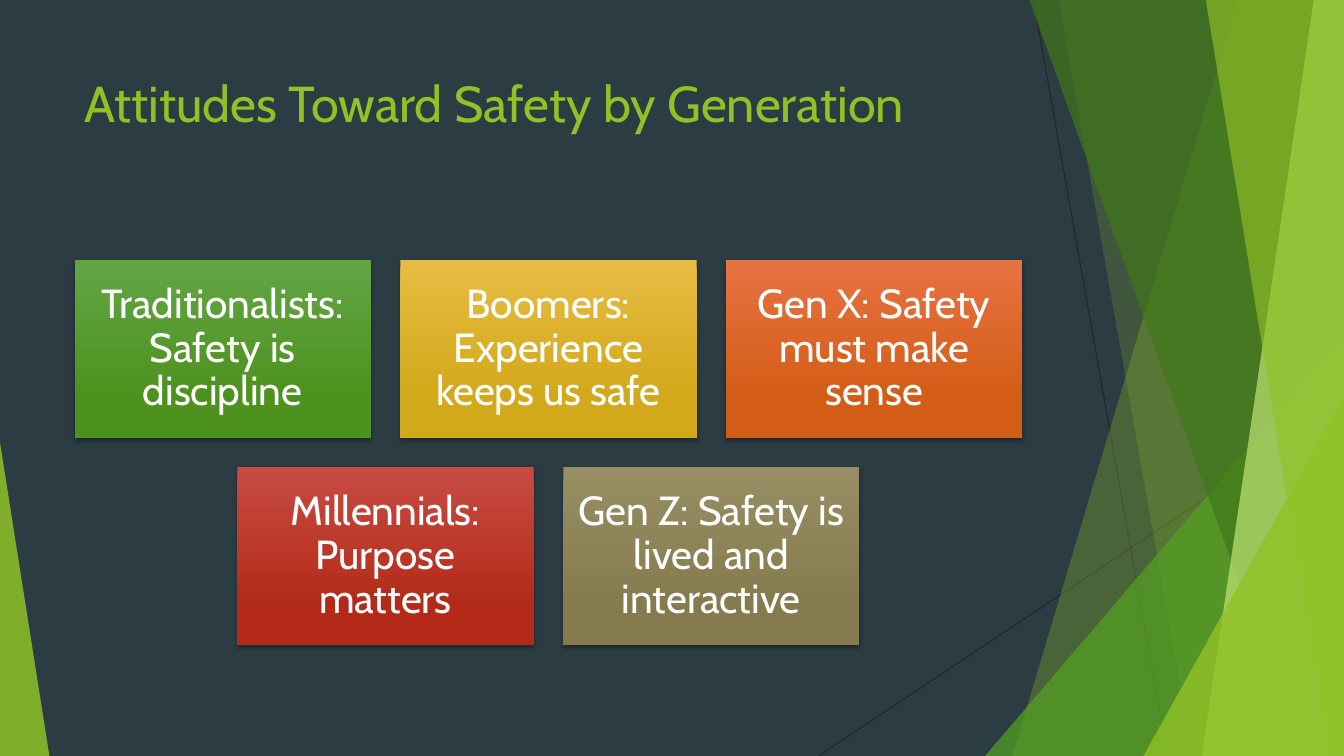
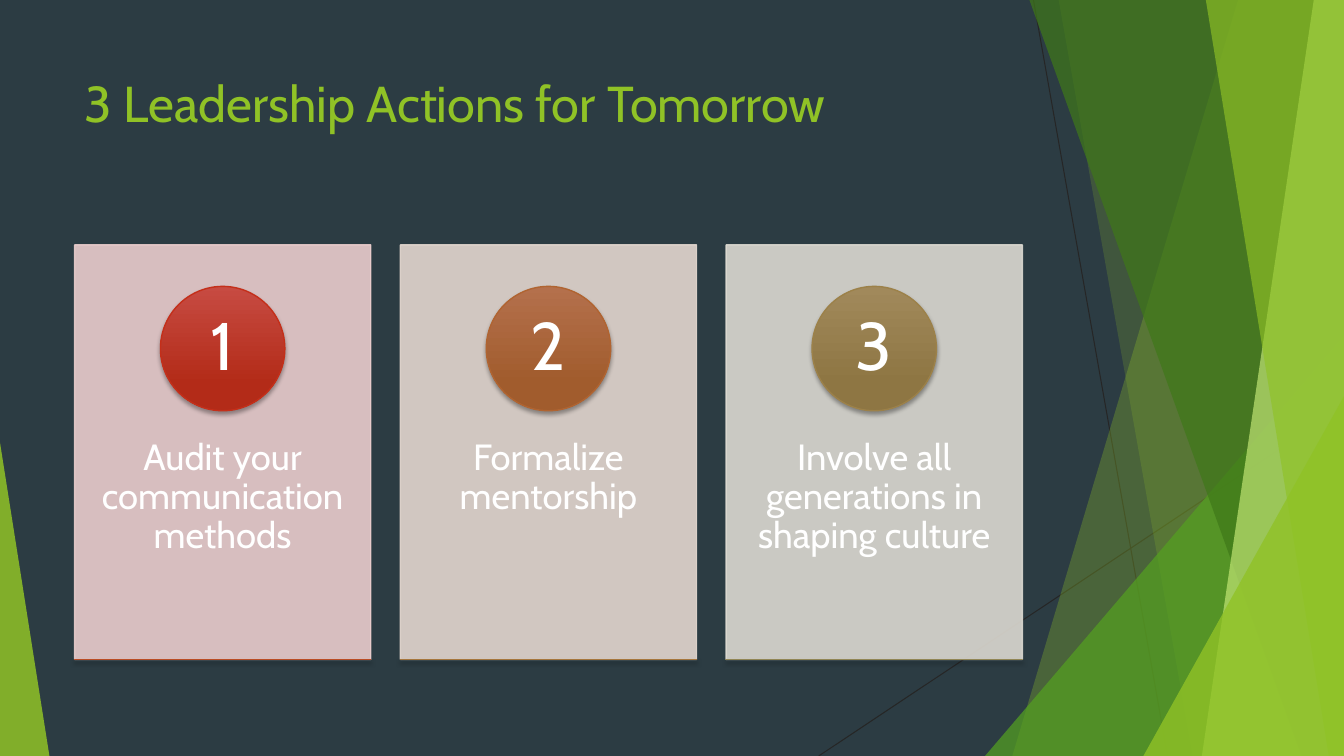
"""Build two slides on generations and workplace safety."""
import lxml.etree
import pptx
import pptx.dml.color
import pptx.enum.shapes
import pptx.enum.text
import pptx.oxml.ns
import pptx.util

Inches, Pt = pptx.util.Inches, pptx.util.Pt
SHAPE = pptx.enum.shapes.MSO_SHAPE
ALIGN = pptx.enum.text.PP_ALIGN
ANCHOR = pptx.enum.text.MSO_ANCHOR
qn = pptx.oxml.ns.qn

FONT = "Cabin"
W, H = 13.33, 7.5
LEFT, WIDTH, COLUMNS = 0.74, 9.4, 3
CELL = WIDTH / (COLUMNS + 0.1 * (COLUMNS - 1))
GAP = 0.1 * CELL

COLORS = {
    "background": "2C3C43", "hairline": "262626", "white": "FFFFFF",
    "lime": "90C226", "green": "54A021", "forest": "3F7819", "pale": "C0E474",
}

HAIRLINES = [((10.25, 0), (11.58, H)), ((W, 4.03), (8.12, H))]

BACKDROP = [
    ("band", (12.28, 10.04), "lime", 30),
    ("band", (10.5, 11.83), "lime", 20),
    ("triangle", (9.77, 3.33, 3.56, 1), "green", 72),
    ("band", (10.21, 12.91), "forest", 70),
    ("band", (13.03, 11.92), "pale", 70),
    ("band", (11.96, 13.18), "lime", 65),
    ("triangle", (11.34, 3.93, 1.99, 1), "lime", 80),
    ("triangle", (0, 4.39, 0.49, 0), "lime", 85),
]

ATTITUDES_TITLE = "Attitudes Toward Safety by Generation"
ATTITUDES = [
    ("Traditionalists: Safety is discipline", ("63A545", "4D921E")),
    ("Boomers: Experience keeps us safe", ("E7BC43", "D2A91B")),
    ("Gen X: Safety must make sense", ("E87242", "D35D16")),
    ("Millennials: Purpose matters", ("C74B42", "B32B18")),
    ("Gen Z: Safety is lived and interactive", ("988E64", "857B4E")),
]

ACTIONS_TITLE = "3 Leadership Actions for Tomorrow"
ACTIONS = [
    {"text": "Audit your communication methods", "card": "EACDCD",
     "badge": ("C74B42", "B32B18"), "ring": "C42F1A",
     "base": ("BE5E46", "AA4622"), "edge": "BA4C25"},
    {"text": "Formalize mentorship", "card": "E3D7CF",
     "badge": ("B4704C", "A15C2D"), "ring": "B06431",
     "base": ("AB7F53", "986C38"), "edge": "A6763D"},
    {"text": "Involve all generations in shaping culture", "card": "DCD9D1",
     "badge": ("A1895B", "8E7643"), "ring": "9C8149",
     "base": ("988E64", "857B4E"), "edge": "918655"},
]


def rgb(color):
    return pptx.dml.color.RGBColor.from_string(color)


def set_alpha(sp, percent):
    for clr in sp.element.spPr.iter(qn("a:srgbClr")):
        lxml.etree.SubElement(clr, qn("a:alpha"), val=str(percent * 1000))


def paint(sp, fill, line=None, alpha=None):
    sp.shadow.inherit = False
    sp.fill.solid()
    sp.fill.fore_color.rgb = rgb(fill)
    outline(sp, line)
    if alpha:
        set_alpha(sp, alpha)


def outline(sp, line):
    if line:
        sp.line.color.rgb = rgb(line)
        sp.line.width = Pt(1)
    else:
        sp.line.fill.background()


def paint_raised(sp, gradient, line=None):
    sp.fill.gradient()
    sp.fill.gradient_angle = 270
    for stop, color, position in zip(sp.fill.gradient_stops, gradient, (0, 0.78)):
        stop.color.rgb = rgb(color)
        stop.position = position
    outline(sp, line)
    sp.shadow.inherit = False
    effects = sp.element.spPr.find(qn("a:effectLst"))
    shadow = lxml.etree.SubElement(
        effects, qn("a:outerShdw"), blurRad=str(Pt(3)), dist=str(Pt(2)),
        dir="5400000", algn="ctr", rotWithShape="0")
    clr = lxml.etree.SubElement(shadow, qn("a:srgbClr"), val="000000")
    lxml.etree.SubElement(clr, qn("a:alpha"), val="35000")


def add_box(shapes, kind, x, y, w, h):
    return shapes.add_shape(kind, Inches(x), Inches(y), Inches(w), Inches(h))


def write(sp, text, size, color="white", align=ALIGN.CENTER,
          anchor=ANCHOR.MIDDLE, margins=(0.12, 0.12), spacing=0.9):
    tf = sp.text_frame
    tf.word_wrap = True
    tf.auto_size = pptx.enum.text.MSO_AUTO_SIZE.NONE
    tf.vertical_anchor = anchor
    tf.margin_left = tf.margin_right = Inches(margins[0])
    tf.margin_top = tf.margin_bottom = Inches(margins[1])
    p = tf.paragraphs[0]
    p.alignment = align
    p.line_spacing = spacing
    r = p.add_run()
    r.text = text
    r.font.name = FONT
    r.font.size = Pt(size)
    r.font.color.rgb = rgb(COLORS[color])


def add_slide(prs, layout, title):
    s = prs.slides.add_slide(layout)
    sp = s.shapes.title
    sp.left, sp.top = Inches(LEFT), Inches(0.67)
    sp.width, sp.height = Inches(WIDTH), Inches(1.44)
    write(sp, title, 36, "lime", ALIGN.LEFT, ANCHOR.TOP, (0.1, 0.05), 1.0)
    return s


def add_band(shapes, top_x, bottom_x):
    corners = [(top_x, 0), (W, 0), (W, H), (bottom_x, H)]
    points = [(Inches(x), Inches(y)) for x, y in corners]
    builder = shapes.build_freeform(*points[0])
    builder.add_line_segments(points[1:], close=True)
    return builder.convert_to_shape()


def add_triangle(shapes, x, y, w, apex):
    sp = add_box(shapes, SHAPE.ISOSCELES_TRIANGLE, x, y, w, H - y)
    sp.adjustments[0] = apex
    return sp


def add_backdrop(layout, s):
    group = s.shapes.add_group_shape()
    for start, end in HAIRLINES:
        line = group.shapes.add_connector(
            pptx.enum.shapes.MSO_CONNECTOR.STRAIGHT,
            *(Inches(v) for v in start + end))
        line.line.color.rgb = rgb(COLORS["hairline"])
        line.line.width = Pt(0.75)
        lxml.etree.SubElement(line.element.spPr, qn("a:effectLst"))
    draw = {"band": add_band, "triangle": add_triangle}
    for kind, geometry, color, alpha in BACKDROP:
        paint(draw[kind](group.shapes, *geometry), COLORS[color], alpha=alpha)
    for number, props in enumerate(group.element.iter(qn("p:cNvPr")), 100):
        props.set("id", str(number))
    layout.element.cSld.spTree.insert(2, group.element)


def row_lefts(count):
    used = count * CELL + (count - 1) * GAP
    start = LEFT + (WIDTH - used) / 2
    return [start + i * (CELL + GAP) for i in range(count)]


def add_attitudes(s):
    height = 0.6 * CELL
    for first in range(0, len(ATTITUDES), COLUMNS):
        row = ATTITUDES[first:first + COLUMNS]
        top = 2.58 + first // COLUMNS * (height + GAP)
        for x, (text, gradient) in zip(row_lefts(len(row)), row):
            tile = add_box(s.shapes, SHAPE.RECTANGLE, x, top, CELL, height)
            paint_raised(tile, gradient)
            write(tile, text, 29)


def add_actions(s):
    top, height = 2.43, 1.4 * CELL
    size = 0.3 * height
    for number, (x, action) in enumerate(zip(row_lefts(len(ACTIONS)), ACTIONS), 1):
        card = add_box(s.shapes, SHAPE.RECTANGLE, x, top, CELL, height)
        paint(card, action["card"], action["card"], 90)
        write(card, action["text"], 26, anchor=ANCHOR.TOP, margins=(0.23, 0.36))
        card.text_frame.margin_top = Inches(0.38 * height + 0.36)
        badge = add_box(s.shapes, SHAPE.OVAL, x + (CELL - size) / 2,
                        top + 0.1 * height, size, size)
        paint_raised(badge, action["badge"], action["ring"])
        write(badge, str(number), 48, margins=(0.1, 0.01))
        base = add_box(s.shapes, SHAPE.RECTANGLE, x, top + height, CELL, 0)
        paint_raised(base, action["base"], action["edge"])


def main():
    prs = pptx.Presentation()
    prs.slide_width, prs.slide_height = Inches(W), Inches(H)
    background = prs.slide_master.background.fill
    background.solid()
    background.fore_color.rgb = rgb(COLORS["background"])
    layout = prs.slide_layouts.get_by_name("Title Only")
    attitudes = add_slide(prs, layout, ATTITUDES_TITLE)
    actions = add_slide(prs, layout, ACTIONS_TITLE)
    add_backdrop(layout, attitudes)
    add_attitudes(attitudes)
    add_actions(actions)
    prs.save("out.pptx")


if __name__ == "__main__":
    main()
